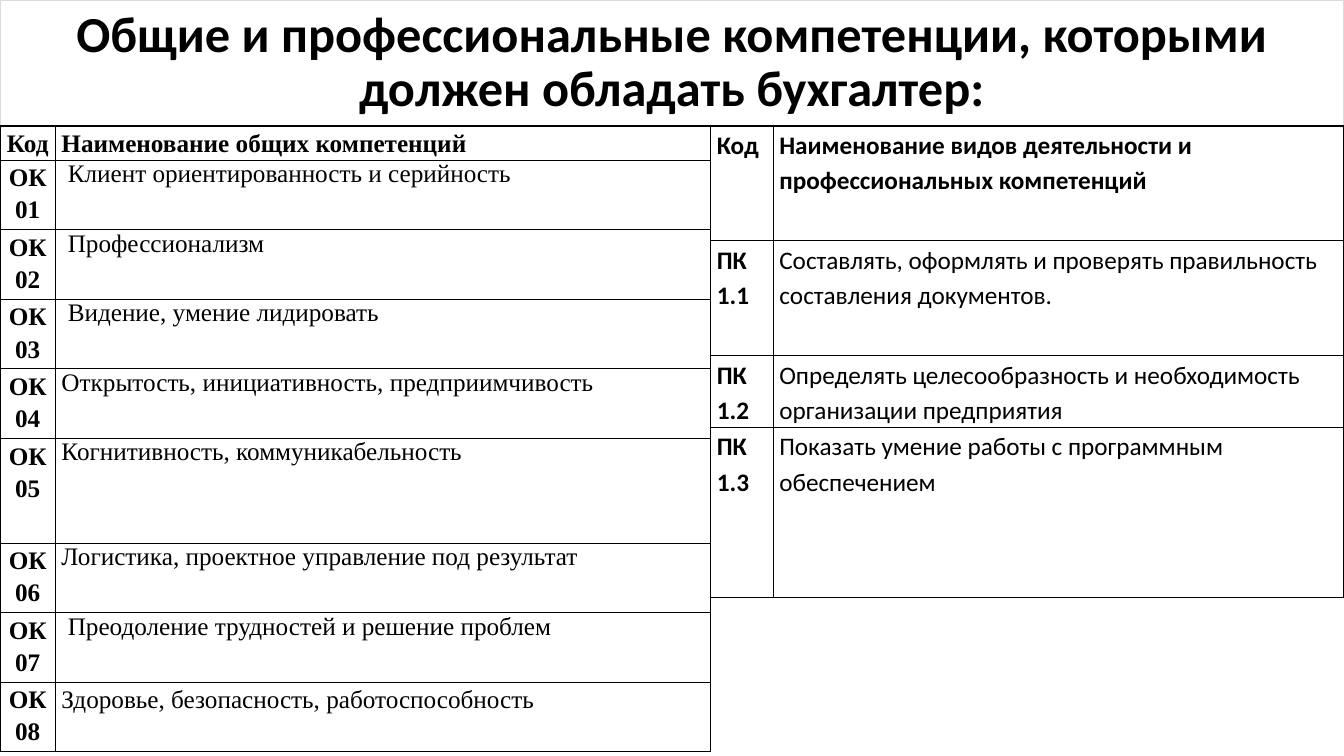
from dataclasses import dataclass

import pptx
import pptx.dml.color
import pptx.enum.text
import pptx.oxml
import pptx.oxml.ns
import pptx.util

EMU_PER_PX = 9144
SLIDE_WIDTH, SLIDE_HEIGHT = 1333, 750
TABLE_TOP = 125
CELL_INSET = 6
CENTER = pptx.enum.text.PP_ALIGN.CENTER
LEFT = pptx.enum.text.PP_ALIGN.LEFT
MIDDLE = pptx.enum.text.MSO_ANCHOR.MIDDLE


@dataclass(frozen=True)
class Theme:
    ink: str = "000000"
    paper: str = "FFFFFF"
    title_line: str = "D6DCE5"
    sans: str = "Calibri"
    serif: str = "Times New Roman"
    title_size: int = 36
    table_size: int = 18
    title_spacing: float = 0.9
    single_spacing: float = 1.0
    loose_spacing: float = 1.15


THEME = Theme()

TITLE = "Общие и профессиональные компетенции, которыми должен обладать бухгалтер:"

GENERAL_ROWS = [
    ("Код", "Наименование общих компетенций"),
    ("ОК 01", " Клиент ориентированность и серийность"),
    ("ОК 02", " Профессионализм"),
    ("ОК 03", " Видение, умение лидировать"),
    ("ОК 04", "Открытость, инициативность, предприимчивость"),
    ("ОК 05", "Когнитивность, коммуникабельность"),
    ("ОК 06", "Логистика, проектное управление под результат"),
    ("ОК 07", " Преодоление трудностей и решение проблем"),
    ("ОК 08", "Здоровье, безопасность, работоспособность"),
]

PROFESSIONAL_ROWS = [
    ("Код", "Наименование видов деятельности и профессиональных компетенций"),
    ("ПК 1.1", "Составлять, оформлять и проверять правильность составления документов."),
    ("ПК 1.2", "Определять целесообразность и необходимость организации предприятия"),
    ("ПК 1.3", "Показать умение работы с программным обеспечением"),
]


def px(length):
    return pptx.util.Emu(length * EMU_PER_PX)


def rgb(color):
    return pptx.dml.color.RGBColor.from_string(color)


def apply_format(target, values):
    for name, value in values.items():
        setattr(target, name, value)


def paint(fill, color):
    fill.solid()
    fill.fore_color.rgb = rgb(color)


def write_text(frame, text, font, para_format):
    para = frame.paragraphs[0]
    apply_format(para, para_format)
    span = para.add_run()
    span.text = text
    apply_format(span.font, font)
    span.font.color.rgb = rgb(THEME.ink)


def add_title(page):
    box = page.shapes.title
    apply_format(box, {"left": px(0), "top": px(0),
                       "width": px(SLIDE_WIDTH), "height": px(TABLE_TOP)})
    paint(box.fill, THEME.paper)
    paint(box.line.fill, THEME.title_line)
    box.line.width = pptx.util.Pt(0.75)
    apply_format(box.text_frame, {
        "word_wrap": True,
        "vertical_anchor": MIDDLE,
        "auto_size": pptx.enum.text.MSO_AUTO_SIZE.NONE,
    })
    write_text(
        box.text_frame, TITLE,
        {"name": THEME.sans, "size": pptx.util.Pt(THEME.title_size), "bold": True},
        {"alignment": CENTER, "line_spacing": THEME.title_spacing})


def add_cell_borders(cell):
    """Draw all four sides; border elements must come before the fill."""
    properties = cell._tc.get_or_add_tcPr()
    for index, side in enumerate(("lnL", "lnR", "lnT", "lnB")):
        border = pptx.oxml.parse_xml(
            f'<a:{side} {pptx.oxml.ns.nsdecls("a")} w="{pptx.util.Pt(1)}">'
            f'<a:solidFill><a:srgbClr val="{THEME.ink}"/></a:solidFill></a:{side}>')
        properties.insert(index, border)


def fill_cell(cell, text, font, para_format):
    apply_format(cell, {"margin_left": px(CELL_INSET), "margin_right": px(CELL_INSET),
                        "margin_top": 0, "margin_bottom": 0})
    paint(cell.fill, THEME.paper)
    add_cell_borders(cell)
    write_text(cell.text_frame, text, font, para_format)


def add_competency_table(page, left, widths, heights, rows, font_name,
                         code_alignment=LEFT, single_spaced_rows=()):
    """Add a code/name table; listed rows get single-spaced names."""
    frame = page.shapes.add_table(len(rows), len(widths), px(left), px(TABLE_TOP),
                                  px(sum(widths)), px(sum(heights)))
    table = frame.table
    apply_format(table, {"first_row": False, "horz_banding": False})
    for column, width in zip(table.columns, widths):
        column.width = px(width)
    for row, height in zip(table.rows, heights):
        row.height = px(height)

    font = {"name": font_name, "size": pptx.util.Pt(THEME.table_size)}
    for index, (code, name) in enumerate(rows):
        name_spacing = (THEME.single_spacing if index in single_spaced_rows
                        else THEME.loose_spacing)
        fill_cell(table.cell(index, 0), code, {**font, "bold": True},
                  {"alignment": code_alignment, "line_spacing": THEME.loose_spacing})
        fill_cell(table.cell(index, 1), name, {**font, "bold": index == 0},
                  {"alignment": LEFT, "line_spacing": name_spacing})


def main():
    deck = pptx.Presentation()
    apply_format(deck, {"slide_width": px(SLIDE_WIDTH), "slide_height": px(SLIDE_HEIGHT)})
    page = deck.slides.add_slide(deck.slide_layouts[5])
    add_title(page)

    general_widths = (55, 650)
    general_heights = [34] + [69] * 4 + [104] + [69] * 3
    add_competency_table(page, 0, general_widths, general_heights, GENERAL_ROWS,
                         THEME.serif, CENTER, range(1, 8))
    add_competency_table(page, sum(general_widths), (62, 566), (114, 114, 71, 169),
                         PROFESSIONAL_ROWS, THEME.sans)
    deck.save("out.pptx")


if __name__ == "__main__":
    main()
